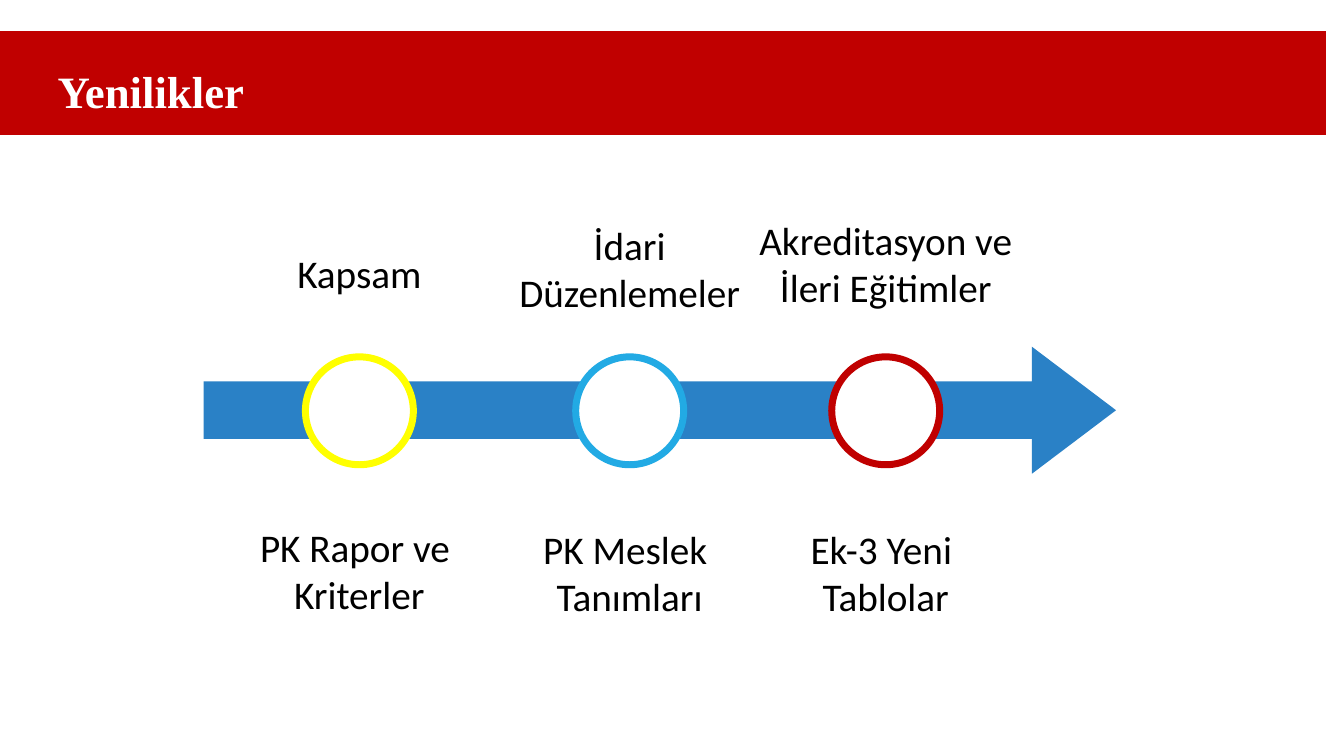
"""Build the Yenilikler slide: a timeline arrow with three labelled milestones."""
from pptx import Presentation, util as u
from pptx.dml.color import RGBColor
from pptx.enum import shapes, text as t

presentation = Presentation()
presentation.slide_width = u.Inches(13.33)
presentation.slide_height = u.Inches(7.5)
column = presentation.slide_width / 100
row = presentation.slide_height / 100
slide = presentation.slides.add_slide(presentation.slide_layouts[5])


def draw(kind, box, fill, line=None):
    shape = slide.shapes.add_shape(kind, *(int(length) for length in box))
    shape.shadow.inherit = False
    shape.fill.solid()
    shape.fill.fore_color.rgb = RGBColor.from_string(fill)
    if line:
        shape.line.color.rgb = RGBColor.from_string(line)
        shape.line.width = u.Pt(5)
    else:
        shape.line.fill.background()
    return shape


def write(shape, content, font="Calibri", size=28, color="000000", bold=False,
          align=t.PP_ALIGN.CENTER, anchor=t.MSO_ANCHOR.TOP, wrap=False,
          fit=t.MSO_AUTO_SIZE.SHAPE_TO_FIT_TEXT, spacing=1.0):
    frame = shape.text_frame
    frame.text = content
    frame.word_wrap = wrap
    frame.auto_size = fit
    frame.vertical_anchor = anchor
    for paragraph in frame.paragraphs:
        paragraph.alignment = align
        paragraph.line_spacing = spacing
        for run in paragraph.runs:
            run.font.name = font
            run.font.size = u.Pt(size)
            run.font.bold = bold
            run.font.color.rgb = RGBColor.from_string(color)


band = draw(shapes.MSO_SHAPE.RECTANGLE,
            (-1.35 * column, 4.13 * row, 100 * column, 13.73 * row), "C00000")
slide.shapes._spTree.insert(2, band._element)

title = slide.shapes.title
title.left, title.top = int(3.53 * column), int(3.47 * row)
title.width, title.height = int(75.47 * column), int(18 * row)
write(title, "Yenilikler", font="Times New Roman", size=32, color="FFFFFF",
      bold=True, align=t.PP_ALIGN.LEFT, anchor=t.MSO_ANCHOR.MIDDLE, wrap=True,
      fit=t.MSO_AUTO_SIZE.NONE, spacing=0.9)

arrow = draw(shapes.MSO_SHAPE.RIGHT_ARROW,
             (15.15 * column, 45.87 * row, 67.89 * column, 16.8 * row), "2A81C6")
arrow.adjustments[0] = 0.453
arrow.adjustments[1] = 0.662

diameter = 8.03 * column
milestones = [
    (26.74, "FFFF00", [("Kapsam", 32.27, 10.88),
                       ("PK Rapor ve \nKriterler", 68.53, 16.5)]),
    (46.85, "22AAE4", [("İdari\nDüzenlemeler", 28.67, 19.73),
                       ("PK Meslek \nTanımları", 68.8, 14.55)]),
    (65.9, "C00000", [("Akreditasyon ve\nİleri Eğitimler", 28, 20.56),
                      ("Ek-3 Yeni \nTablolar", 68.8, 12.98)]),
]
for center, color, labels in milestones:
    draw(shapes.MSO_SHAPE.OVAL,
         (center * column - diameter / 2, 47.2 * row, diameter, diameter),
         "FFFFFF", color)
    for content, top, width in labels:
        lines = content.count("\n") + 1
        box = ((center - width / 2) * column, top * row,
               width * column, (1.33 + 6.27 * lines) * row)
        label = slide.shapes.add_textbox(*(int(length) for length in box))
        write(label, content)

presentation.save("out.pptx")
